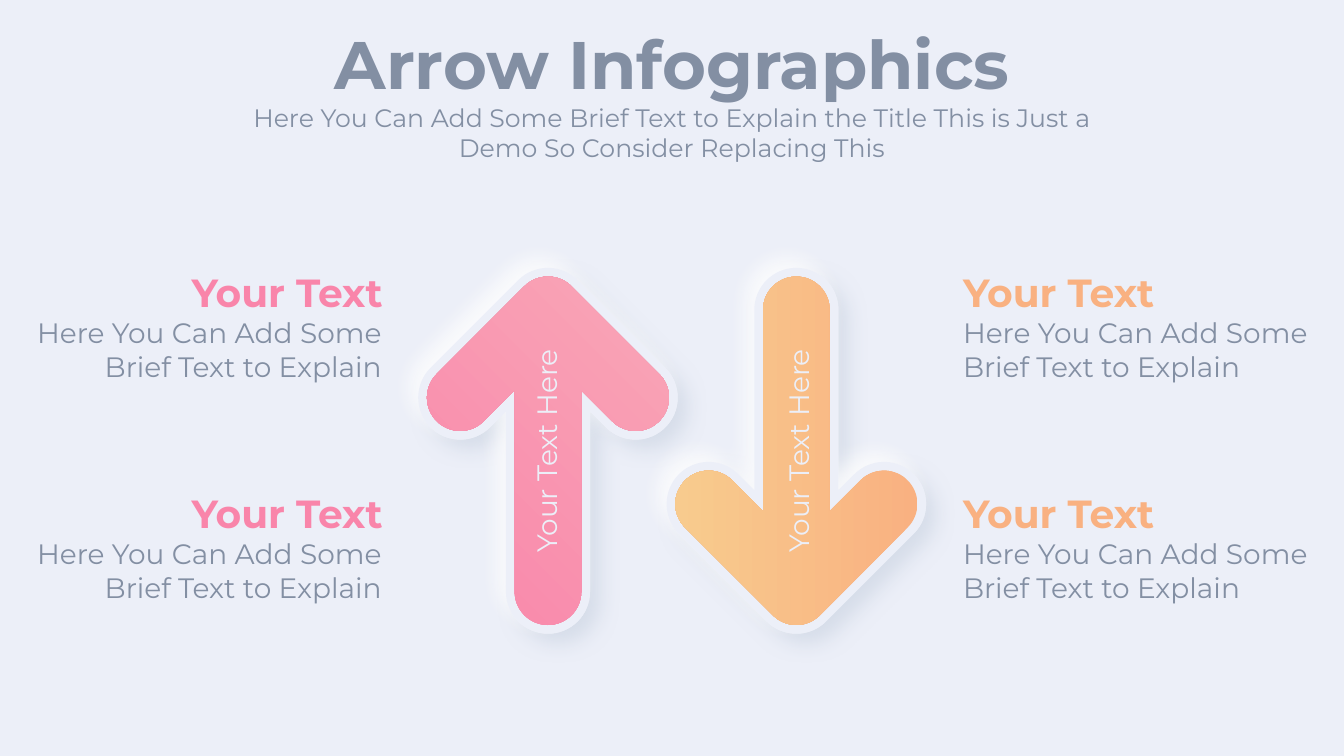
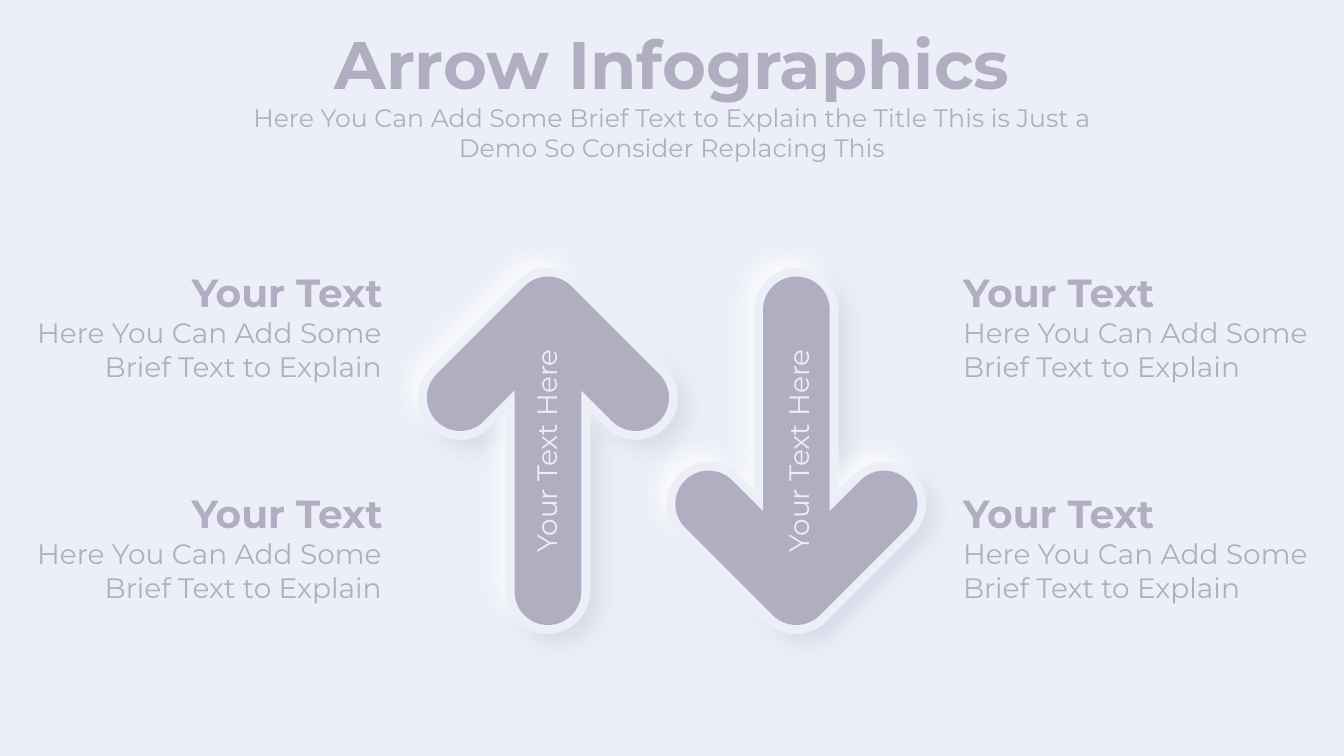
import math

import lxml.etree
import pptx
import pptx.dml.color
import pptx.enum.text
import pptx.oxml.ns
import pptx.util

Cm = pptx.util.Cm
RGBColor = pptx.dml.color.RGBColor
ALIGN = pptx.enum.text.PP_ALIGN
qn = pptx.oxml.ns.qn

# Colours: a list is a gradient, a single colour a plain fill
BACKGROUND = RGBColor(0xEC, 0xEF, 0xF8)
SHADE = RGBColor(0xD1, 0xD9, 0xE6)
LIGHT = RGBColor(0xFF, 0xFF, 0xFF)
SLATE = RGBColor(0x83, 0x8F, 0xA3)
MAUVE = RGBColor(0xB1, 0xAE, 0xC2)
PINK = [RGBColor(0xFF, 0x59, 0x8A), RGBColor(0xFF, 0x8A, 0x9C)]
ORANGE = [RGBColor(0xFF, 0x97, 0x4F), RGBColor(0xFE, 0xBD, 0x61)]
GRADIENT_ALPHA = 70000

FONT = "Montserrat"

# Arrow geometry in cm: rounded strokes around a stem and two arms
ARROW_Y = 11.36
HALF_LENGTH = 3.55
ARM = 2.21
RIM_RADIUS = 1.06
FACE_RADIUS = 0.84
UP, DOWN = -1, 1

# Text columns in cm
LEFT_COLUMN, RIGHT_COLUMN = 0.43, 24.02
ROW_TOPS = (6.63, 12.2)
BODY_OFFSET = 1.2

TITLE = "Arrow Infographics"
SUBTITLE = ("Here You Can Add Some Brief Text to Explain the Title "
            "This is Just a Demo So Consider Replacing This")
HEADING = "Your Text"
BODY = "Here You Can Add Some Brief Text to Explain"
ARROW_LABEL = "Your Text Here"


def paint(sp, fill, ink, angle=180):
    """Fill a shape or a font with a plain colour or a translucent gradient."""
    if not isinstance(ink, list):
        fill.solid()
        fill.fore_color.rgb = ink
        return
    fill.gradient()
    fill.gradient_angle = angle
    for stop, color in zip(fill.gradient_stops, ink):
        stop.color.rgb = color
    for stop in sp.element.iter(qn("a:gs")):
        lxml.etree.SubElement(stop[0], qn("a:alpha"), val=str(GRADIENT_ALPHA))


def add_text(shapes, text, box, size, ink, align, bold=False, rotation=0):
    sp = shapes.add_textbox(*(Cm(v) for v in box))
    sp.rotation = rotation
    tf = sp.text_frame
    tf.word_wrap = True
    tf.auto_size = pptx.enum.text.MSO_AUTO_SIZE.SHAPE_TO_FIT_TEXT
    p = tf.paragraphs[0]
    p.alignment = align
    r = p.add_run()
    r.text = text
    r.font.name = FONT
    r.font.size = pptx.util.Pt(size)
    r.font.bold = bold
    paint(sp, r.font.fill, ink)


def arc(x, y, radius, *angles):
    """A line to the first angle, then one Bezier curve to each next angle.

    Each step is a list of points: one for a line, three for a curve.
    """
    def on_circle(angle, pull=0.0):
        c, s = math.cos(math.radians(angle)), math.sin(math.radians(angle))
        return x + radius * (c - pull * s), y + radius * (s + pull * c)

    steps = [[on_circle(angles[0])]]
    for start, end in zip(angles, angles[1:]):
        pull = 4 / 3 * math.tan(math.radians(end - start) / 4)
        steps.append([on_circle(start, pull), on_circle(end, -pull),
                      on_circle(end)])
    return steps


def arrow_outline(radius):
    """Steps around a downward arrow centred on the origin."""
    arm_y = HALF_LENGTH - ARM
    notch_y = HALF_LENGTH - radius * (1 + math.sqrt(2))
    return [
        *arc(0, -HALF_LENGTH, radius, 180, 270, 360),
        [(radius, notch_y)],
        *arc(ARM, arm_y, radius, 225, 270, 360, 405),
        *arc(0, HALF_LENGTH, radius, 45, 90, 135),
        *arc(-ARM, arm_y, radius, 135, 180, 270, 315),
        [(-radius, notch_y)],
    ]


def add_arrow_shape(shapes, x, direction, radius, ink, angle=180):
    steps = [[(Cm(x + direction * dx), Cm(ARROW_Y + direction * dy))
              for dx, dy in step] for step in arrow_outline(radius)]
    ends = [step[-1] for step in steps]
    builder = shapes.build_freeform(*ends[0])
    builder.add_line_segments(ends[1:], close=True)
    sp = builder.convert_to_shape()
    # Turn the rounded steps into curves
    segments = list(sp.element.iter(qn("a:lnTo")))
    for segment, step in zip(segments, steps[1:]):
        if len(step) == 3:
            curve = lxml.etree.Element(qn("a:cubicBezTo"))
            for px, py in step:
                lxml.etree.SubElement(curve, qn("a:pt"), x=str(px - sp.left),
                                      y=str(py - sp.top))
            segment.getparent().replace(segment, curve)
    sp.shadow.inherit = False
    sp.line.fill.background()
    paint(sp, sp.fill, ink, angle)
    return sp


def add_shadow(sp, color, degrees):
    effects = next(sp.element.iter(qn("a:effectLst")))
    shadow = lxml.etree.SubElement(
        effects, qn("a:outerShdw"), blurRad=str(pptx.util.Pt(15)),
        dist=str(pptx.util.Pt(10)), dir=str(degrees * 60000),
        algn="ctr", rotWithShape="0")
    clr = lxml.etree.SubElement(shadow, qn("a:srgbClr"), val=str(color))
    lxml.etree.SubElement(clr, qn("a:alpha"), val="80000")


def add_arrow(slide, x, label_x, direction, ink, angle):
    shapes = slide.shapes.add_group_shape().shapes
    # Raised rim: dark shadow below right, light one above left
    for color, degrees in ((SHADE, 45), (LIGHT, 225)):
        rim = add_arrow_shape(shapes, x, direction, RIM_RADIUS, BACKGROUND)
        add_shadow(rim, color, degrees)
    add_arrow_shape(shapes, x, direction, FACE_RADIUS, ink, angle)
    width, height = 7.32, 1.12
    box = (label_x - width / 2, ARROW_Y - height / 2, width, height)
    add_text(shapes, ARROW_LABEL, box, 20, BACKGROUND, ALIGN.CENTER,
             rotation=270)


def add_column(slide, left, align, heading_ink, body_ink):
    for top in ROW_TOPS:
        shapes = slide.shapes.add_group_shape().shapes
        add_text(shapes, HEADING, (left, top, 9.46, 1.45),
                 28, heading_ink, align, bold=True)
        add_text(shapes, BODY, (left, top + BODY_OFFSET, 9.44, 1.96),
                 20, body_ink, align)


def add_arrow_slide(prs, text_ink, up_ink, down_ink):
    slide = prs.slides.add_slide(prs.slide_layouts[6])
    # Arrows
    add_arrow(slide, 13.81, 13.77, UP, up_ink, 45)
    add_arrow(slide, 20.07, 20.12, DOWN, down_ink, 180)
    # Side texts
    add_column(slide, LEFT_COLUMN, ALIGN.RIGHT, up_ink, text_ink)
    add_column(slide, RIGHT_COLUMN, ALIGN.LEFT, down_ink, text_ink)
    # Title and subtitle
    add_text(slide.shapes, TITLE, (7.06, 0.43, 19.76, 2.31), 48, text_ink,
             ALIGN.CENTER, bold=True)
    add_text(slide.shapes, SUBTITLE, (5.85, 2.46, 22.17, 1.8), 18, text_ink,
             ALIGN.CENTER)


def main():
    prs = pptx.Presentation()
    prs.slide_width, prs.slide_height = Cm(33.87), Cm(19.05)
    backdrop = prs.slide_master.background.fill
    backdrop.solid()
    backdrop.fore_color.rgb = BACKGROUND

    add_arrow_slide(prs, SLATE, PINK, ORANGE)
    add_arrow_slide(prs, MAUVE, MAUVE, MAUVE)
    prs.save("out.pptx")


if __name__ == "__main__":
    main()
